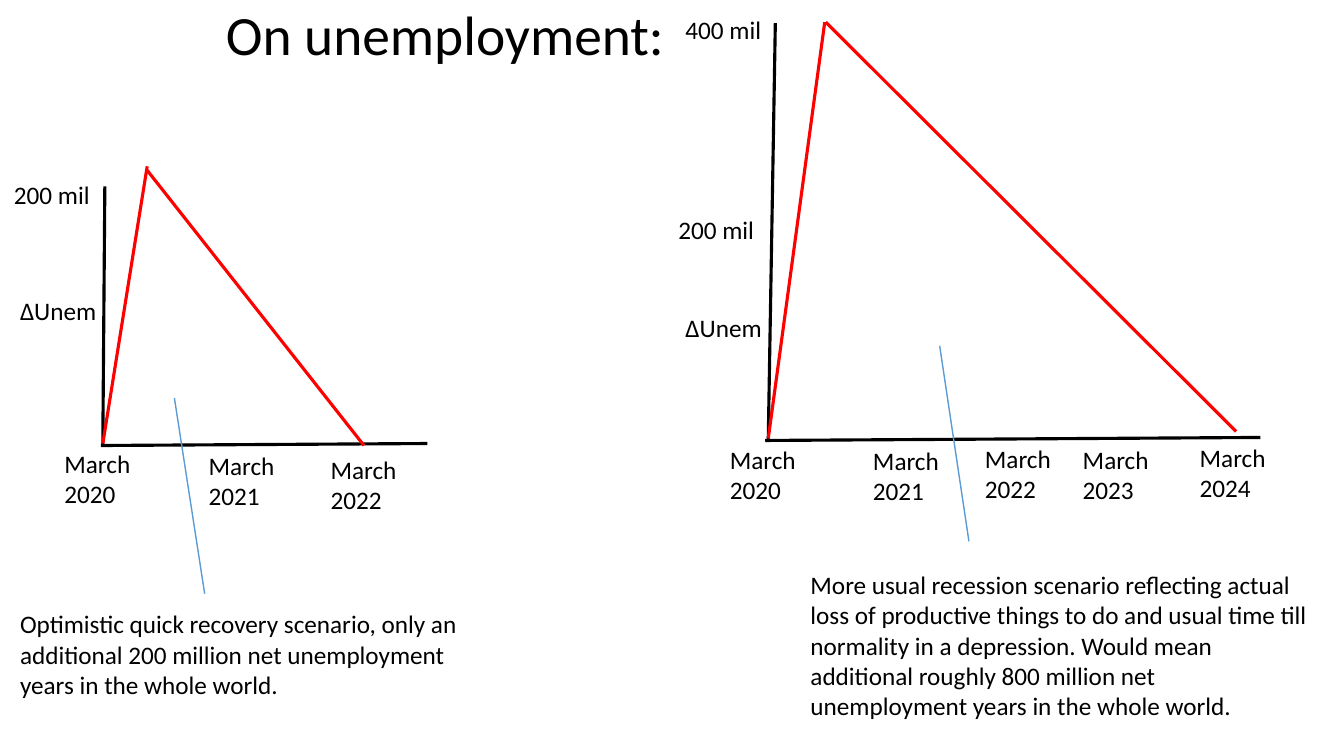
from lxml import etree
from pptx import Presentation
from pptx import util as u
from pptx.dml.color import RGBColor
from pptx.enum import shapes, text
from pptx.oxml.ns import qn

PX = 9144  # EMU per px, 100 px to the inch
FONT = "Calibri"
COLORS = {"ink": "000000", "curve": "FF0000", "pointer": "5B9BD5"}

OPTIMISTIC = {
    "axes": [((104, 25), (102, 281)), ((424, 280), (100, 282))],
    "curve": [((102, 280), (146, 5)), ((361, 282), (146, 9))],
    "pointer": [((173, 235), (203, 429))],
    "levels": [("200 mil", 4, 13), ("ΔUnem", 10, 128)],
    "dates": [("March 2020", 54, 280), ("March 2021", 197, 282),
              ("March 2022", 318, 286)],
    "caption": ("Optimistic quick recovery scenario, only an additional "
                "200 million net unemployment years in the whole world.",
                10, 439, 478, 101),
}
RECESSION = {
    "axes": [((109, 23), (102, 436)), ((590, 434), (99, 437))],
    "curve": [((102, 435), (158, 22)), ((566, 428), (159, 22))],
    "pointer": [((272, 343), (301, 537))],
    "levels": [("400 mil", 10, 9), ("200 mil", 3, 208), ("ΔUnem", 10, 305)],
    "dates": [("March 2020", 54, 436), ("March 2021", 196, 437),
              ("March 2022", 307, 435), ("March 2023", 404, 436),
              ("March 2024", 520, 434)],
    "caption": ("More usual recession scenario reflecting actual loss of "
                "productive things to do and usual time till normality in a "
                "depression. Would mean additional roughly 800 million net "
                "unemployment years in the whole world.",
                134, 560, 517, 162),
}


def px(*lengths):
    return [u.Emu(length * PX) for length in lengths]


def add_span(para, words, size):
    span = para.add_run()
    span.text = words
    span.font.name = FONT
    span.font.size = u.Pt(size)
    span.font.color.rgb = RGBColor.from_string(COLORS["ink"])


def add_title(page, words, left, top, width, height):
    title = page.shapes.title
    title.left, title.top, title.width, title.height = px(left, top, width, height)
    frame = title.text_frame
    frame.auto_size = text.MSO_AUTO_SIZE.NONE
    frame.vertical_anchor = text.MSO_ANCHOR.MIDDLE
    para = frame.paragraphs[0]
    para.alignment = text.PP_ALIGN.LEFT
    para.line_spacing = 0.9
    add_span(para, words, 39.6)


def add_label(page, words, left, top, width, height):
    box = page.shapes.add_textbox(*px(left, top, width, height))
    box.text_frame.word_wrap = True
    box.text_frame.auto_size = text.MSO_AUTO_SIZE.SHAPE_TO_FIT_TEXT
    add_span(box.text_frame.paragraphs[0], words, 18)


def add_line(page, start, end, color, weight):
    line = page.shapes.add_connector(
        shapes.MSO_CONNECTOR.STRAIGHT, *px(*start, *end))
    line.line.color.rgb = RGBColor.from_string(COLORS[color])
    line.line.width = u.Pt(weight)
    etree.SubElement(line._element.spPr, qn("a:effectLst"))


def add_scenario(page, scenario, left, top):
    """Draw one sketched graph with its labels, pointer and caption."""
    styles = [("axes", "ink", 2.25), ("curve", "curve", 2.25),
              ("pointer", "pointer", 1)]
    for part, color, weight in styles:
        for (x1, y1), (x2, y2) in scenario[part]:
            add_line(page, (left + x1, top + y1), (left + x2, top + y2),
                     color, weight)
    for part, height in (("levels", 40), ("dates", 71)):
        for words, x, y in scenario[part]:
            add_label(page, words, left + x, top + y, 131, height)
    words, x, y, width, height = scenario["caption"]
    add_label(page, words, left + x, top + y, width, height)


def main():
    deck = Presentation()
    deck.slide_width, deck.slide_height = px(1333, 750)
    page = deck.slides.add_slide(deck.slide_layouts.get_by_name("Title Only"))
    add_title(page, "On unemployment:", 214, 5, 1150, 65)
    add_scenario(page, OPTIMISTIC, 0, 160)
    add_scenario(page, RECESSION, 660, 0)
    deck.save("out.pptx")


if __name__ == "__main__":
    main()
